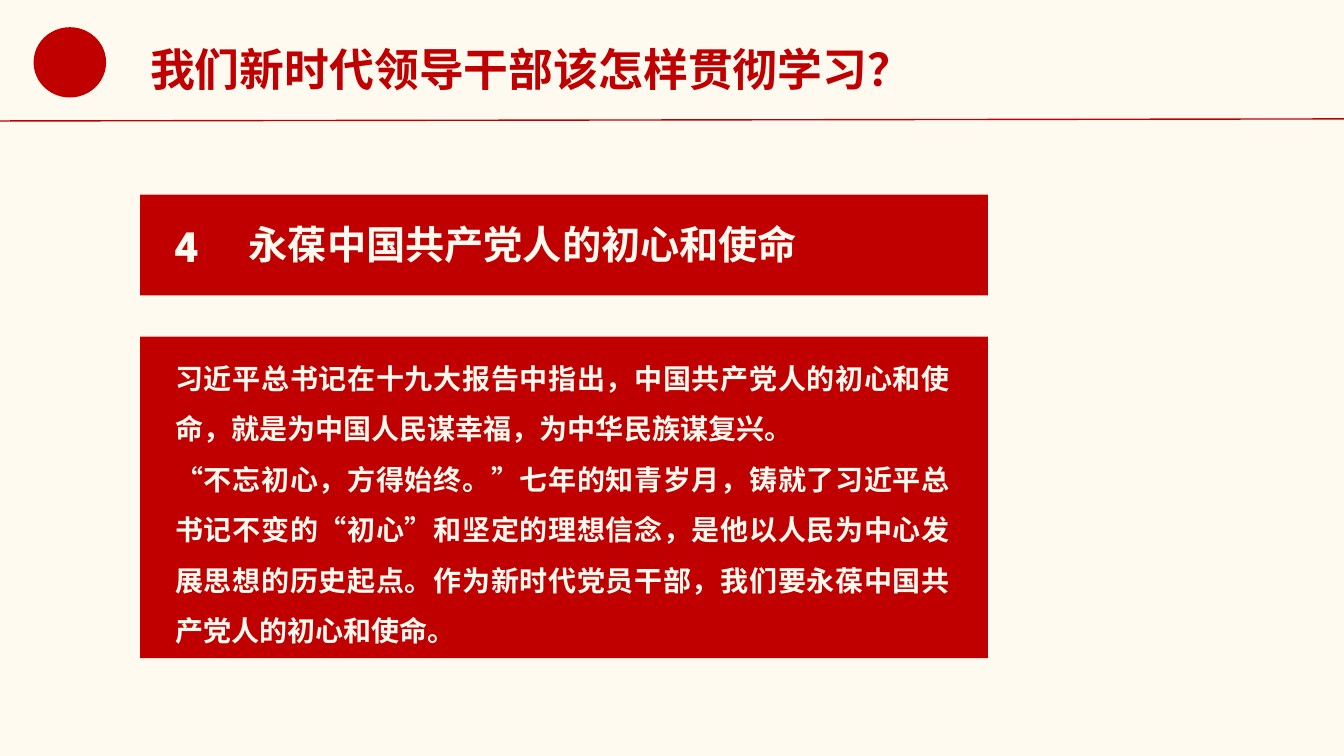
from lxml import etree
from pptx import Presentation
from pptx.dml.color import RGBColor
from pptx.enum.lang import MSO_LANGUAGE_ID
from pptx.enum.shapes import MSO_CONNECTOR, MSO_SHAPE
from pptx.enum.text import MSO_AUTO_SIZE, PP_ALIGN
from pptx.oxml.ns import qn
from pptx.util import Inches, Pt

RED = RGBColor(0xC0, 0x00, 0x00)
CREAM = RGBColor(0xFF, 0xFA, 0xF0)
CHINESE_FONT = "Noto Sans CJK SC"
NUMBER_FONT = "League Spartan"
RECTANGLE, OVAL = MSO_SHAPE.RECTANGLE, MSO_SHAPE.OVAL
STRAIGHT = MSO_CONNECTOR.STRAIGHT
JUSTIFY = PP_ALIGN.JUSTIFY
GROW = MSO_AUTO_SIZE.SHAPE_TO_FIT_TEXT
CHINESE = MSO_LANGUAGE_ID.SIMPLIFIED_CHINESE

# Positions and sizes are percentages of the slide's width and height.
PANEL_LEFT, PANEL_WIDTH = 10.43, 63.08
TEXT_LEFT = 12.3

TITLE = "我们新时代领导干部该怎样贯彻学习？"
HEADING = "永葆中国共产党人的初心和使命"
BODY = [
    "习近平总书记在十九大报告中指出，中国共产党人的初心和使命，就是为中国人民谋幸福，为中华民族谋复兴。",
    "“不忘初心，方得始终。”七年的知青岁月，铸就了习近平总书记不变的“初心”和坚定的理想信念，"
    "是他以人民为中心发展思想的历史起点。作为新时代党员干部，我们要永葆中国共产党人的初心和使命。",
]


class SlideBuilder:
    def __init__(self, deck):
        self.width, self.height = deck.slide_width, deck.slide_height
        self.slide = deck.slides.add_slide(deck.slide_layouts[6])
        background = self.slide.background.fill
        background.solid()
        background.fore_color.rgb = CREAM

    def place(self, across, down):
        """Turn percentages of the slide into lengths."""
        return int(self.width * across / 100), int(self.height * down / 100)

    def panel(self, left, top, width, height, kind=RECTANGLE):
        shape = self.slide.shapes.add_shape(
            kind, *self.place(left, top), *self.place(width, height))
        shape.shadow.inherit = False
        shape.fill.solid()
        shape.fill.fore_color.rgb = RED
        shape.line.fill.background()

    def rule(self, start, end):
        line = self.slide.shapes.add_connector(
            STRAIGHT, *self.place(*start), *self.place(*end))
        line.line.color.rgb = RED
        line.line.width = Pt(1)
        etree.SubElement(line._element.spPr, qn("a:effectLst"))

    def text(self, left, top, width, height, paragraphs, size, color=CREAM,
             font=CHINESE_FONT, wrap=False, **layout):
        box = self.slide.shapes.add_textbox(
            *self.place(left, top), *self.place(width, height))
        frame = box.text_frame
        frame.word_wrap = wrap
        frame.auto_size = GROW
        style = {"name": font, "size": Pt(size), "bold": True,
                 "language_id": CHINESE}
        for index, words in enumerate(paragraphs):
            para = frame.add_paragraph() if index else frame.paragraphs[0]
            for name, value in layout.items():
                setattr(para, name, value)
            span = para.add_run()
            span.text = words
            for name, value in style.items():
                setattr(span.font, name, value)
            span.font.color.rgb = color
            latin = span.font._element.find(qn("a:latin"))
            east_asian = etree.Element(qn("a:ea"), typeface=font)
            latin.addnext(east_asian)


def main():
    deck = Presentation()
    deck.slide_width, deck.slide_height = Inches(13.33), Inches(7.5)
    page = SlideBuilder(deck)

    page.panel(2.5, 3.6, 5.4, 9.3, kind=OVAL)
    page.rule((0, 16), (100, 15.73))
    page.text(PANEL_LEFT, 4.8, 58.2, 8.53, [TITLE], 32, color=RED)

    page.panel(PANEL_LEFT, 44.53, PANEL_WIDTH, 42.53)
    page.text(TEXT_LEFT, 44.93, 59.1, 40.93, BODY, 20, wrap=True,
              alignment=JUSTIFY, line_spacing=1.5)

    page.panel(PANEL_LEFT, 25.73, PANEL_WIDTH, 13.33)
    page.text(17.78, 28.53, 42.75, 7.6, [HEADING], 28)
    page.text(TEXT_LEFT, 28.13, 3.38, 8.53, ["4"], 32, font=NUMBER_FONT)

    deck.save("out.pptx")


if __name__ == "__main__":
    main()
